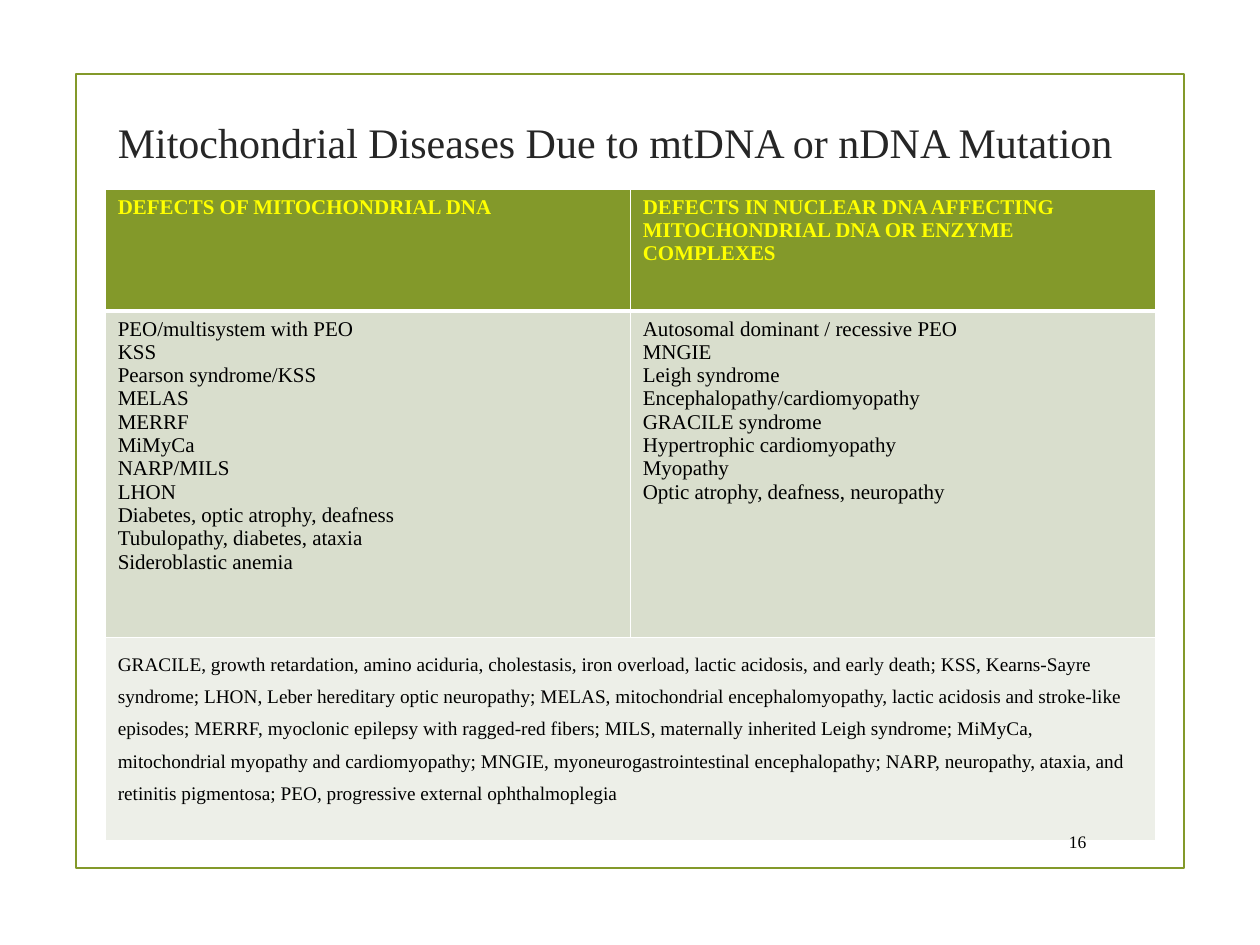
from lxml.etree import SubElement
from pptx import Presentation
from pptx.dml.color import RGBColor
from pptx.enum.shapes import MSO_SHAPE as Shape
from pptx.enum.text import MSO_ANCHOR as Anchor, MSO_AUTO_SIZE as AutoSize, PP_ALIGN as Align
from pptx.oxml.ns import qn
from pptx.util import Cm, Pt

OLIVE = RGBColor(0x83, 0x99, 0x2A)
SAGE = RGBColor(0xD9, 0xDE, 0xCD)
PALE_SAGE = RGBColor(0xED, 0xEF, 0xE8)
YELLOW = RGBColor(0xFF, 0xFF, 0x00)
CHARCOAL = RGBColor(0x26, 0x26, 0x26)
BLACK = RGBColor(0x00, 0x00, 0x00)
WHITE = RGBColor(0xFF, 0xFF, 0xFF)

FONT = "Times New Roman"
TITLE_FORMAT = {"name": FONT, "size": Pt(24), "bold": False}
HEADER_FORMAT = {"name": FONT, "size": Pt(12), "bold": True}
BODY_FORMAT = {"name": FONT, "size": Pt(12), "bold": False}
KEY_FORMAT = {"name": FONT, "size": Pt(11), "bold": False}
NUMBER_FORMAT = {"name": FONT, "size": Pt(10), "bold": False}

LEFT, WIDTH = Cm(2.12), Cm(21.17)
ROW_HEIGHTS = [Cm(2.46), Cm(6.58), Cm(4.09)]

HEADERS = [
    "DEFECTS OF MITOCHONDRIAL DNA",
    "DEFECTS IN NUCLEAR DNA AFFECTING MITOCHONDRIAL DNA OR ENZYME COMPLEXES",
]
DISEASES = [
    [
        "PEO/multisystem with PEO",
        "KSS",
        "Pearson syndrome/KSS",
        "MELAS",
        "MERRF",
        "MiMyCa",
        "NARP/MILS",
        "LHON",
        "Diabetes, optic atrophy, deafness",
        "Tubulopathy, diabetes, ataxia",
        "Sideroblastic anemia",
    ],
    [
        "Autosomal dominant / recessive PEO",
        "MNGIE",
        "Leigh syndrome",
        "Encephalopathy/cardiomyopathy",
        "GRACILE syndrome",
        "Hypertrophic cardiomyopathy",
        "Myopathy",
        "Optic atrophy, deafness, neuropathy",
    ],
]
ABBREVIATIONS = (
    "GRACILE, growth retardation, amino aciduria, cholestasis, iron overload, "
    "lactic acidosis, and early death; KSS, Kearns-Sayre syndrome; LHON, Leber "
    "hereditary optic neuropathy; MELAS, mitochondrial encephalomyopathy, lactic "
    "acidosis and stroke-like episodes; MERRF, myoclonic epilepsy with ragged-red "
    "fibers; MILS, maternally inherited Leigh syndrome; MiMyCa, mitochondrial "
    "myopathy and cardiomyopathy; MNGIE, myoneurogastrointestinal encephalopathy; "
    "NARP, neuropathy, ataxia, and retinitis pigmentosa; PEO, progressive external "
    "ophthalmoplegia"
)


def write_lines(text_frame, lines, text_format, color, align=Align.LEFT, spacing=None):
    """Put each line in a paragraph of its own."""
    for index, line in enumerate(lines):
        paragraph = text_frame.paragraphs[0] if index == 0 else text_frame.add_paragraph()
        paragraph.alignment = align
        paragraph.line_spacing = spacing
        run = paragraph.add_run()
        run.text = line
        for name, value in text_format.items():
            setattr(run.font, name, value)
        run.font.color.rgb = color


def add_frame(slide):
    frame = slide.shapes.add_shape(Shape.RECTANGLE, Cm(1.54), Cm(1.5), Cm(22.33), Cm(16))
    frame.shadow.inherit = False
    frame.fill.background()
    frame.line.color.rgb = OLIVE
    frame.line.width = Pt(1.25)


def set_title(slide, text):
    title = slide.shapes.title
    title.left, title.top, title.width, title.height = LEFT, Cm(1.9), WIDTH, Cm(1.91)
    title.text_frame.auto_size = AutoSize.NONE
    title.text_frame.vertical_anchor = Anchor.MIDDLE
    write_lines(title.text_frame, [text], TITLE_FORMAT, CHARCOAL)


def set_borders(cell, top, bottom):
    """Draw white borders; top and bottom are widths, the sides are 1 pt."""
    properties = cell._tc.get_or_add_tcPr()
    for tag, width in {"lnL": Pt(1), "lnR": Pt(1), "lnT": top, "lnB": bottom}.items():
        line = SubElement(properties, qn(f"a:{tag}"), w=str(width))
        SubElement(SubElement(line, qn("a:solidFill")), qn("a:srgbClr"), val=str(WHITE))


def fill_cell(cell, lines, text_format, color, fill, top=Pt(1), bottom=Pt(1), spacing=None):
    set_borders(cell, top, bottom)
    cell.fill.solid()
    cell.fill.fore_color.rgb = fill
    write_lines(cell.text_frame, lines, text_format, color, spacing=spacing)


def add_disease_table(slide):
    table = slide.shapes.add_table(3, 2, LEFT, Cm(3.81), WIDTH, sum(ROW_HEIGHTS)).table
    for row, height in zip(table.rows, ROW_HEIGHTS):
        row.height = height
    for index, (header, diseases) in enumerate(zip(HEADERS, DISEASES)):
        fill_cell(table.cell(0, index), [header], HEADER_FORMAT, YELLOW, OLIVE, bottom=Pt(3))
        fill_cell(table.cell(1, index), diseases, BODY_FORMAT, BLACK, SAGE, top=Pt(3))
    key = table.cell(2, 0)
    key.merge(table.cell(2, 1))
    fill_cell(key, [ABBREVIATIONS], KEY_FORMAT, BLACK, PALE_SAGE, spacing=1.5)


def add_page_number(slide, number):
    box = slide.shapes.add_textbox(Cm(21.06), Cm(16.56), Cm(1.09), Cm(0.79))
    box.text_frame.word_wrap = True
    box.text_frame.vertical_anchor = Anchor.MIDDLE
    write_lines(box.text_frame, [number], NUMBER_FORMAT, BLACK, Align.RIGHT)


def main():
    presentation = Presentation()
    presentation.slide_width, presentation.slide_height = Cm(25.4), Cm(19.05)
    slide = presentation.slides.add_slide(presentation.slide_layouts[5])
    add_frame(slide)
    set_title(slide, "Mitochondrial Diseases Due to mtDNA or nDNA Mutation")
    add_disease_table(slide)
    add_page_number(slide, "16")
    presentation.save("out.pptx")


if __name__ == "__main__":
    main()
